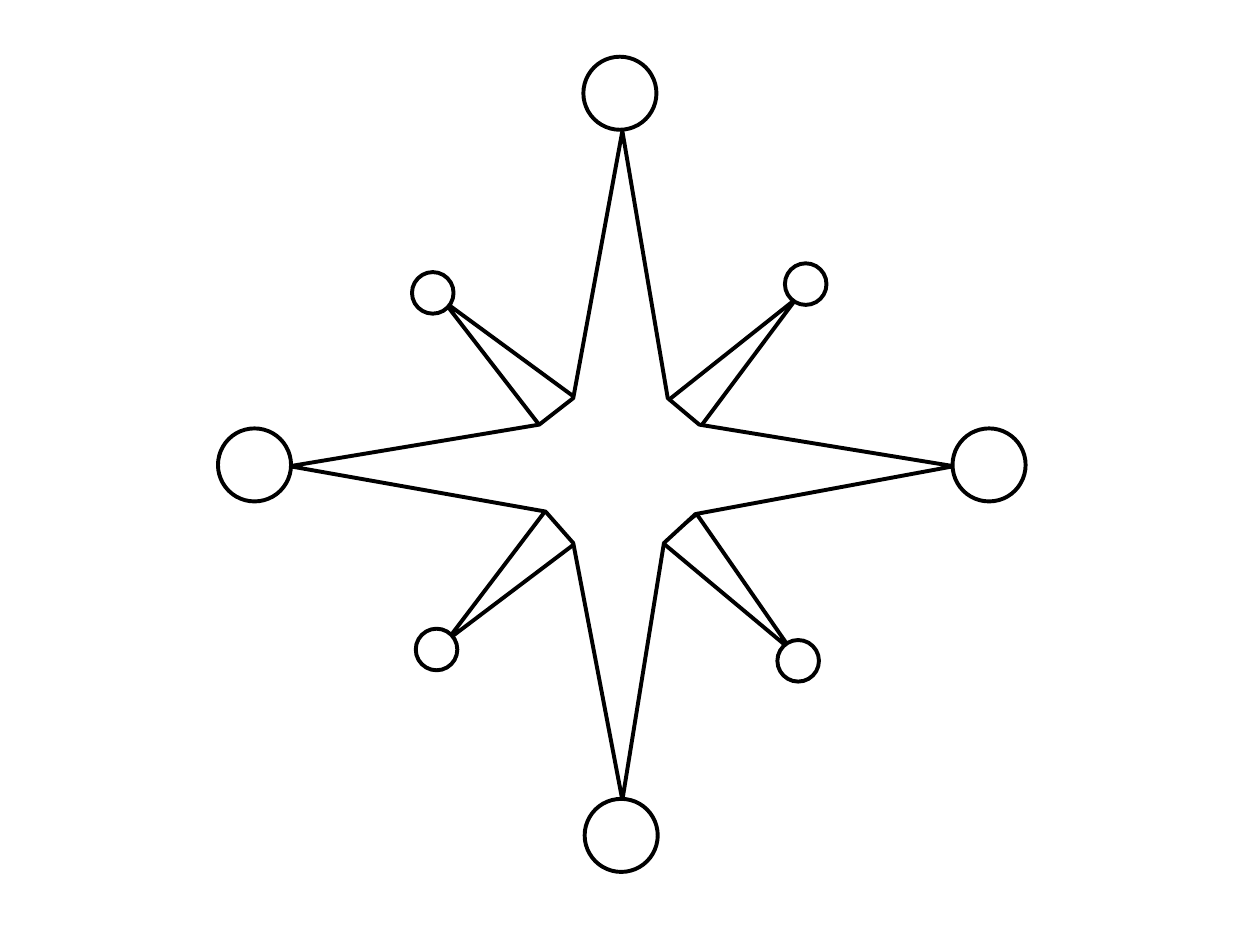
from pptx import Presentation
from pptx import util as u
from pptx.dml.color import RGBColor
from pptx.enum import shapes

COLORS = {"fill": "FFFFFF", "line": "000000"}

RAYS = [
    [(6.28, 5.16), (5.25, 4.3), (5.53, 4.08)],
    [(5.3, 3.18), (5.55, 3.4), (6.32, 2.37)],
    [(4.34, 3.45), (4.57, 3.16), (3.52, 2.39)],
    [(4.34, 4.04), (3.55, 5.08), (4.57, 4.31)],
]
STAR = [
    (4.94, 1.04), (4.55, 3.16), (4.28, 3.37),
    (2.3, 3.7), (4.33, 4.06), (4.55, 4.31),
    (4.94, 6.35), (5.27, 4.31), (5.52, 4.08),
    (7.57, 3.7), (5.55, 3.37), (5.3, 3.16),
]
# Diameter of the circles: their left and top corners
CIRCLES = {
    0.58: [(7.56, 3.4), (4.64, 6.34), (1.73, 3.4), (4.63, 0.45)],
    0.33: [(6.17, 5.08), (6.23, 2.09), (3.27, 2.16), (3.3, 4.99)],
}


def style(shape):
    shape.shadow.inherit = False
    shape.fill.solid()
    shape.fill.fore_color.rgb = RGBColor.from_string(COLORS["fill"])
    shape.line.color.rgb = RGBColor.from_string(COLORS["line"])
    shape.line.width = u.Pt(2.25)


def add_outline(group, points):
    start, *rest = [(u.Inches(x), u.Inches(y)) for x, y in points]
    pen = group.shapes.build_freeform(*start)
    pen.add_line_segments(rest, close=True)
    style(pen.convert_to_shape())


def add_circle(group, left, top, size):
    style(group.shapes.add_shape(
        shapes.MSO_SHAPE.OVAL, u.Inches(left), u.Inches(top),
        u.Inches(size), u.Inches(size)))


def main():
    deck = Presentation()
    deck.slide_width, deck.slide_height = u.Inches(10), u.Inches(7.5)
    slide = deck.slides.add_slide(deck.slide_layouts[6])
    compass = slide.shapes.add_group_shape()
    for points in [*RAYS, STAR]:
        add_outline(compass, points)
    for size, corners in CIRCLES.items():
        for left, top in corners:
            add_circle(compass, left, top, size)
    deck.save("out.pptx")


if __name__ == "__main__":
    main()
